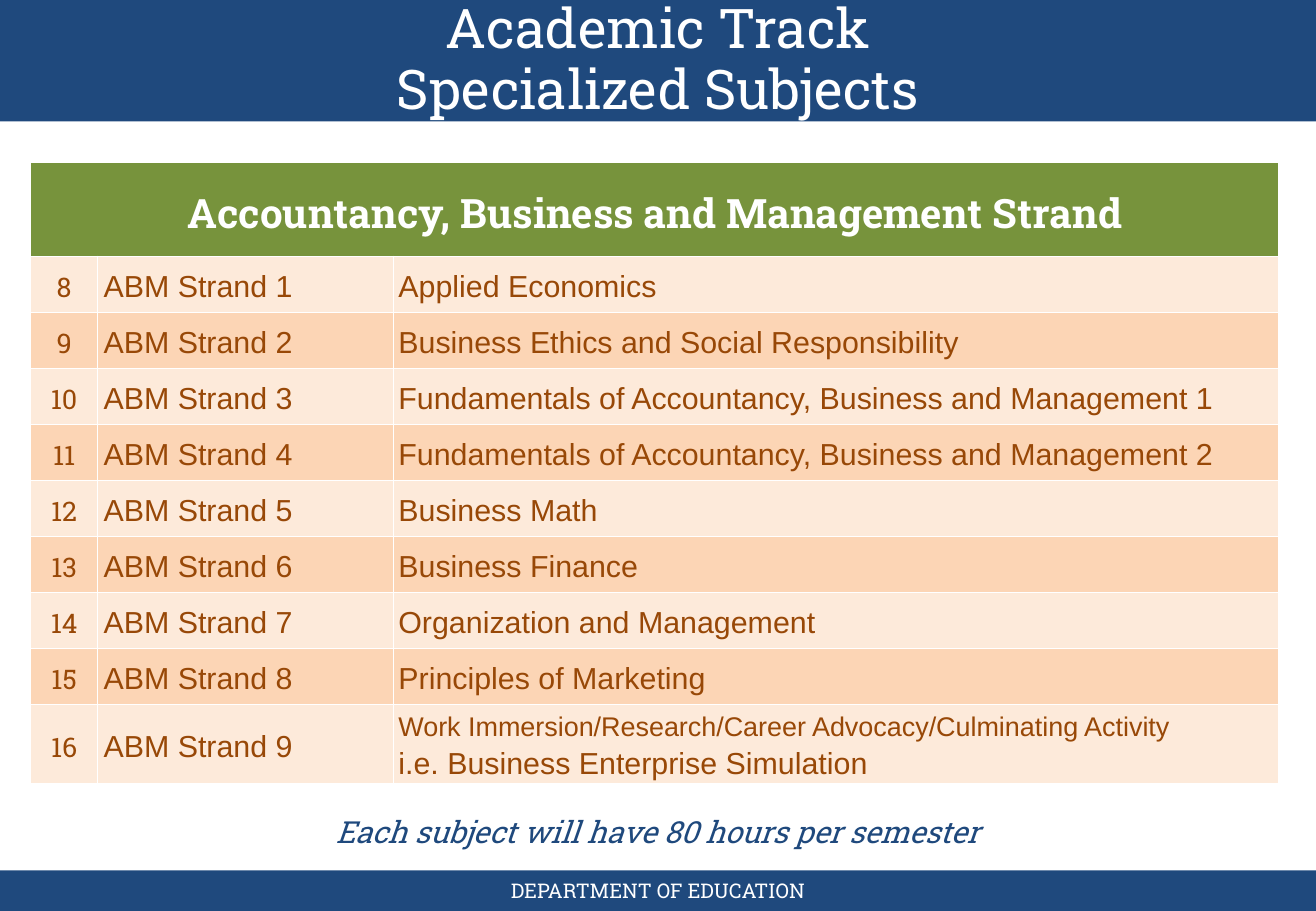
from lxml.etree import SubElement
from pptx import Presentation
from pptx.dml.color import RGBColor
from pptx.enum.shapes import MSO_SHAPE
from pptx.enum.text import MSO_ANCHOR, PP_ALIGN
from pptx.oxml.ns import qn
from pptx.util import Pt

COLORS = {
    "navy": "1F497D",
    "green": "77933C",
    "light": "FDEADA",
    "peach": "FCD5B5",
    "brown": "984807",
    "white": "FFFFFF",
}
SLAB = "Roboto Slab"
SLIDE_WIDTH, SLIDE_HEIGHT = 780, 540

SUBJECTS = [
    "Applied Economics",
    "Business Ethics and Social Responsibility",
    "Fundamentals of Accountancy, Business and Management 1",
    "Fundamentals of Accountancy, Business and Management 2",
    "Business Math",
    "Business Finance",
    "Organization and Management",
    "Principles of Marketing",
    "Work Immersion/Research/Career Advocacy/Culminating Activity",
]


def add_run(paragraph, text, size, color, font=SLAB, bold=False, italic=False):
    run = paragraph.add_run()
    run.text = text
    run.font.name = font
    run.font.size = Pt(size)
    run.font.bold = bold
    run.font.italic = italic
    run.font.color.rgb = RGBColor.from_string(COLORS[color])


def format_cell(cell, fill, margin, centered):
    """Set borders, fill and margins of a cell and return its first paragraph."""
    properties = cell._tc.get_or_add_tcPr()
    for side in ("a:lnL", "a:lnR", "a:lnT", "a:lnB"):
        line = SubElement(properties, qn(side), w=str(Pt(1)))
        line_fill = SubElement(line, qn("a:solidFill"))
        SubElement(line_fill, qn("a:srgbClr"), val=COLORS["white"])
    cell.fill.solid()
    cell.fill.fore_color.rgb = RGBColor.from_string(COLORS[fill])
    cell.vertical_anchor = MSO_ANCHOR.MIDDLE
    cell.margin_left = cell.margin_right = Pt(margin)
    cell.margin_top = cell.margin_bottom = Pt(0)
    paragraph = cell.text_frame.paragraphs[0]
    paragraph.line_spacing = 1.15
    if centered:
        paragraph.alignment = PP_ALIGN.CENTER
        indents = paragraph._p.get_or_add_pPr()
        indents.set("marL", str(Pt(27)))
        indents.set("indent", str(-Pt(27)))
    return paragraph


presentation = Presentation()
presentation.slide_width = Pt(SLIDE_WIDTH)
presentation.slide_height = Pt(SLIDE_HEIGHT)
slide = presentation.slides.add_slide(presentation.slide_layouts[6])

# Header and footer bands
for top, height in ((0, 72), (516, 24)):
    band = slide.shapes.add_shape(
        MSO_SHAPE.RECTANGLE, Pt(0), Pt(top), Pt(SLIDE_WIDTH), Pt(height))
    band.shadow.inherit = False
    band.fill.solid()
    band.fill.fore_color.rgb = RGBColor.from_string(COLORS["navy"])
    band.line.fill.background()

# Title, note and footer text
captions = [
    (39, 0, 702, 72, ["Academic Track", "Specialized Subjects"], 32.4, "white", False),
    (32.4, 462.5, 715, 60, ["Each subject will have 80 hours per semester"], 18, "navy", True),
    (39, 516, 702, 24, ["DEPARTMENT OF EDUCATION"], 12, "white", False),
]
for left, top, width, height, lines, size, color, italic in captions:
    box = slide.shapes.add_textbox(Pt(left), Pt(top), Pt(width), Pt(height))
    frame = box.text_frame
    frame.word_wrap = True
    frame.vertical_anchor = MSO_ANCHOR.MIDDLE
    paragraph = frame.paragraphs[0]
    paragraph.alignment = PP_ALIGN.CENTER
    for number, line in enumerate(lines):
        if number:
            paragraph.add_line_break()
            paragraph.line_spacing = 0.93
        add_run(paragraph, line, size, color, italic=italic)

# Subject table
column_widths = [39.6, 175.4, 525]
header_height, row_height = 56, 33.2
table = slide.shapes.add_table(
    len(SUBJECTS) + 1, 3, Pt(18.2), Pt(96), Pt(sum(column_widths)),
    Pt(header_height + row_height * len(SUBJECTS))).table
table.first_row = table.horz_banding = False
for column, width in zip(table.columns, column_widths):
    column.width = Pt(width)
for row in table.rows:
    row.height = Pt(row_height)
table.rows[0].height = Pt(header_height)

# Strand heading
heading = table.cell(0, 0)
heading.merge(table.cell(0, 2))
add_run(format_cell(heading, "green", 3, True),
        "Accountancy, Business and Management Strand", 24, "white", bold=True)

# Subject rows
for index, subject in enumerate(SUBJECTS, start=1):
    fill = "light" if index % 2 else "peach"
    subject_size = 16 if index == len(SUBJECTS) else 18
    entries = [
        (str(index + 7), 16, SLAB, 3, True),
        (f"ABM Strand {index}", 18, "Arial", 3.6, False),
        (subject, subject_size, "Arial", 3, False),
    ]
    for column, (text, size, font, margin, centered) in enumerate(entries):
        paragraph = format_cell(table.cell(index, column), fill, margin, centered)
        add_run(paragraph, text, size, "brown", font)

# Second line of the last subject
paragraph = table.cell(len(SUBJECTS), 2).text_frame.add_paragraph()
paragraph.line_spacing = 1.15
add_run(paragraph, "i.e. Business Enterprise Simulation", 18, "brown", "Arial")

presentation.save("out.pptx")
